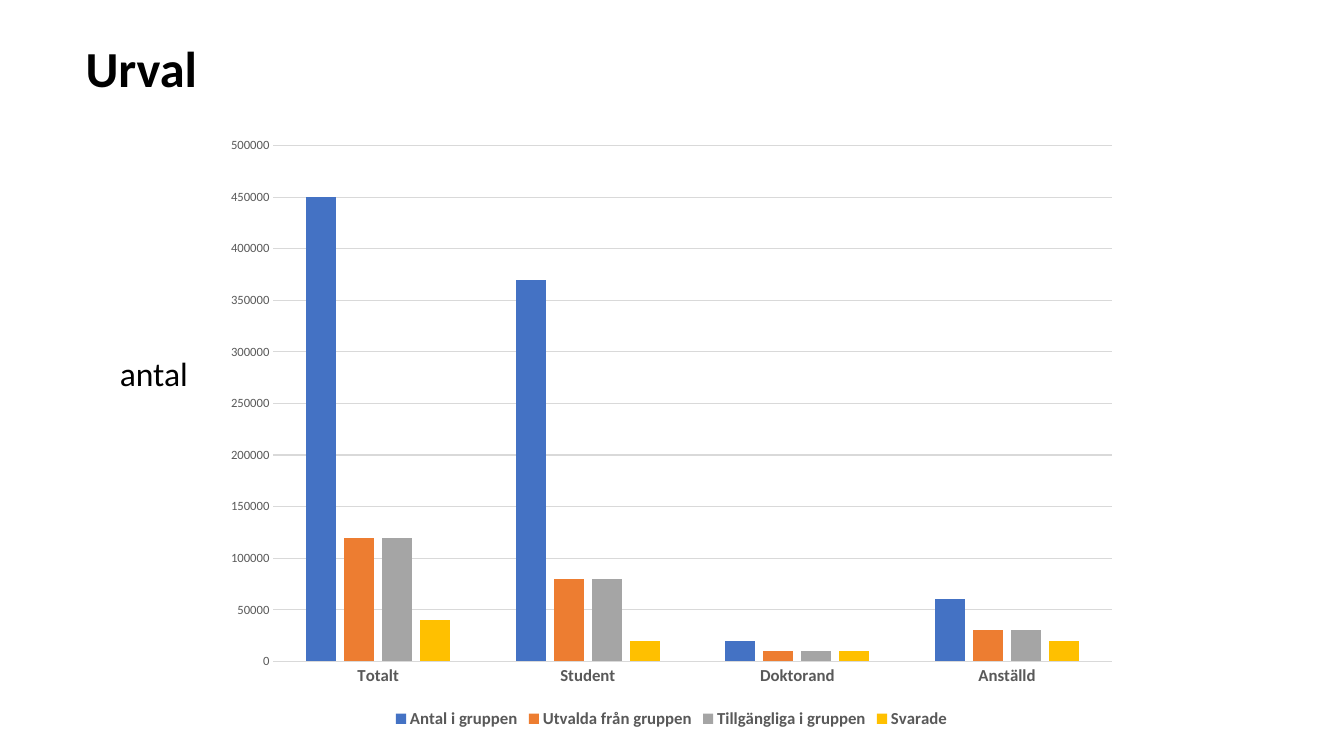
from dataclasses import dataclass

from pptx import Presentation
from pptx.chart.data import CategoryChartData
from pptx.dml.color import RGBColor
from pptx.enum.chart import XL_CHART_TYPE, XL_LEGEND_POSITION, XL_TICK_MARK
from pptx.enum.text import MSO_AUTO_SIZE
from pptx.util import Inches, Pt

COLUMN = XL_CHART_TYPE.COLUMN_CLUSTERED
BOTTOM = XL_LEGEND_POSITION.BOTTOM
NO_TICK = XL_TICK_MARK.NONE
FIT_SHAPE = MSO_AUTO_SIZE.SHAPE_TO_FIT_TEXT
NO_FIT = MSO_AUTO_SIZE.NONE


@dataclass(frozen=True)
class Theme:
    font: str = "Calibri"
    ink: str = "000000"
    label: str = "595959"
    grid: str = "D9D9D9"
    bars: tuple = ("4472C4", "ED7D31", "A5A5A5", "FFC000")
    title: int = 36
    body: int = 24
    legend: int = 12
    base: int = 10
    scale: int = 9


GROUPS = ("Totalt", "Student", "Doktorand", "Anställd")
COUNTS = {
    "Antal i gruppen": (450000, 370000, 20000, 60000),
    "Utvalda från gruppen": (120000, 80000, 10000, 30000),
    "Tillgängliga i gruppen": (120000, 80000, 10000, 30000),
    "Svarade": (40000, 20000, 10000, 20000),
}


class Page:
    def __init__(self, slide, theme):
        self.slide = slide
        self.theme = theme

    def style(self, font, size, color, bold=False):
        font.name = self.theme.font
        font.size = Pt(size)
        font.bold = bold
        font.color.rgb = RGBColor.from_string(color)

    def rule(self, line):
        line.width = Pt(0.75)
        line.color.rgb = RGBColor.from_string(self.theme.grid)

    def text(self, words, box, size, bold=False, space=1.0, fit=NO_FIT):
        frame = self.slide.shapes.add_textbox(*map(Inches, box)).text_frame
        frame.word_wrap = True
        frame.auto_size = fit
        frame.text = words
        para = frame.paragraphs[0]
        para.line_spacing = space
        self.style(para.runs[0].font, size, self.theme.ink, bold)

    def chart(self, groups, counts, box):
        theme = self.theme
        data = CategoryChartData()
        data.categories = groups
        for name, values in counts.items():
            data.add_series(name, values)
        chart = self.slide.shapes.add_chart(
            COLUMN, *map(Inches, box), data).chart
        chart.has_title = False
        self.style(chart.font, theme.base, theme.ink)

        # Columns
        plot = chart.plots[0]
        plot.gap_width = 219
        plot.overlap = -27
        plot.vary_by_categories = False
        for series, color in zip(plot.series, theme.bars):
            series.format.fill.solid()
            series.format.fill.fore_color.rgb = RGBColor.from_string(color)

        # Axes
        groups_axis, count_axis = chart.category_axis, chart.value_axis
        for axis in (groups_axis, count_axis):
            axis.major_tick_mark = axis.minor_tick_mark = NO_TICK
        self.style(groups_axis.tick_labels.font, theme.legend, theme.label, True)
        self.rule(groups_axis.format.line)
        self.style(count_axis.tick_labels.font, theme.scale, theme.label)
        count_axis.format.line.fill.background()
        count_axis.minimum_scale = 0
        count_axis.maximum_scale = 500000
        count_axis.major_unit = 50000
        self.rule(count_axis.major_gridlines.format.line)

        # Legend
        chart.has_legend = True
        chart.legend.position = BOTTOM
        chart.legend.include_in_layout = False
        self.style(chart.legend.font, theme.legend, theme.label, True)


def main():
    deck = Presentation()
    deck.slide_width, deck.slide_height = Inches(13.33), Inches(7.5)
    theme = Theme()
    page = Page(deck.slides.add_slide(deck.slide_layouts[6]), theme)

    # Chart, heading and axis caption
    page.chart(GROUPS, COUNTS, (2.11, 1.25, 9.1, 6.02))
    page.text("Urval", (0.75, 0.39, 11.5, 1.45), theme.title, True, 0.9)
    page.text("antal", (1.09, 3.45, 0.94, 0.5), theme.body, fit=FIT_SHAPE)

    deck.save("out.pptx")


if __name__ == "__main__":
    main()
